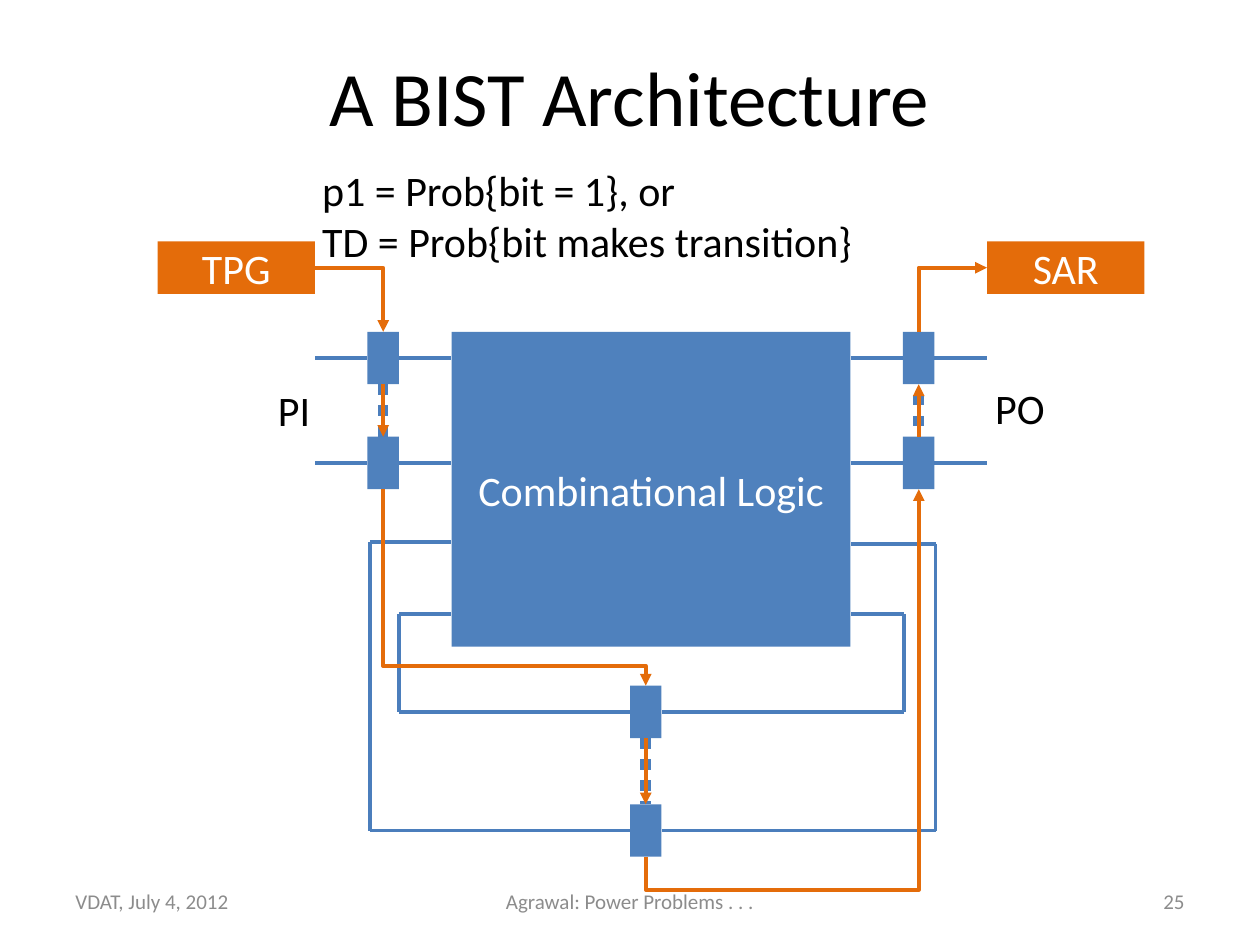
import pptx
import pptx.util
import pptx.dml.color
import pptx.enum.dml
import pptx.enum.shapes
import pptx.enum.text
import pptx.oxml
import pptx.oxml.ns

THEME = {
    "font": "Calibri",
    "ink": "000000", "muted": "8C8C8C", "white": "FFFFFF",
    "block": "4F81BD", "wire": "4B7EBC", "scan": "E46C0A",
    "title": 44, "body": 24, "footer": 12,
    "line": 2.25, "dots": 6,
}
ALIGN = pptx.enum.text.PP_ALIGN
ANCHOR = pptx.enum.text.MSO_ANCHOR
KIND = pptx.enum.shapes.MSO_CONNECTOR
qn = pptx.oxml.ns.qn

deck = pptx.Presentation()
deck.slide_width = pptx.util.Inches(10)
deck.slide_height = pptx.util.Inches(7.5)
page = deck.slides.add_slide(deck.slide_layouts[6])
CELL = deck.slide_width / 120


def write(box, lines, size, color, align, anchor, wrap=True):
    frame = box.text_frame
    frame.text = "\n".join(lines)
    frame.word_wrap = wrap
    frame.vertical_anchor = anchor
    for para in frame.paragraphs:
        para.alignment = align
        para.font.name = THEME["font"]
        para.font.size = pptx.util.Pt(THEME[size])
        para.font.color.rgb = pptx.dml.color.RGBColor.from_string(THEME[color])


def connect(kind, ends, color="wire", width="line", begin=None, end=None):
    line = page.shapes.add_connector(kind, *[round(v * CELL) for v in ends])
    line.line.color.rgb = pptx.dml.color.RGBColor.from_string(THEME[color])
    line.line.width = pptx.util.Pt(THEME[width])
    if begin:
        line.begin_connect(*begin)
    if end:
        line.end_connect(*end)
    pptx.oxml.ns.qn
    stroke = line.line._get_or_add_ln()
    if width == "dots":
        line.line.dash_style = pptx.enum.dml.MSO_LINE.ROUND_DOT
    if color == "scan":
        stroke.append(pptx.oxml.parse_xml(
            f'<a:tailEnd {pptx.oxml.ns.nsdecls("a")} type="triangle"/>'))
    stroke.addnext(pptx.oxml.parse_xml(
        f'<a:effectLst {pptx.oxml.ns.nsdecls("a")}/>'))
    return line


blocks = {}
for name, left, top, width, height, color, label in [
    ("logic", 43, 31.6, 38, 30, "block", "Combinational Logic"),
    ("state top", 60, 65.3, 3, 5, "block", ""),
    ("state bottom", 60, 76.6, 3, 5, "block", ""),
    ("output bottom", 86, 41.6, 3, 5, "block", ""),
    ("output top", 86, 31.6, 3, 5, "block", ""),
    ("input bottom", 35, 41.6, 3, 5, "block", ""),
    ("input top", 35, 31.6, 3, 5, "block", ""),
    ("generator", 15, 23, 15, 5, "scan", "TPG"),
    ("analyzer", 94, 23, 15, 5, "scan", "SAR"),
]:
    block = page.shapes.add_shape(
        pptx.enum.shapes.MSO_SHAPE.RECTANGLE,
        *[round(v * CELL) for v in (left, top, width, height)])
    block.shadow.inherit = False
    block.fill.solid()
    block.fill.fore_color.rgb = pptx.dml.color.RGBColor.from_string(THEME[color])
    block.line.fill.background()
    if label:
        write(block, [label], "body", "white", ALIGN.CENTER, ANCHOR.MIDDLE)
    blocks[name] = block

for group, column, top, bottom in [("input", 36.5, 36.6, 41.6),
                                   ("state", 61.5, 70.3, 76.6)]:
    connect(KIND.STRAIGHT, (column, top, column, bottom), width="dots",
            begin=(blocks[group + " top"], 2), end=(blocks[group + " bottom"], 0))
connect(KIND.STRAIGHT, (87.5, 37.6, 87.5, 40.6), width="dots")

for place, row in [("top", 34.1), ("bottom", 44.1)]:
    source, sink = blocks["input " + place], blocks["output " + place]
    connect(KIND.STRAIGHT, (30, row, 35, row), end=(source, 1))
    connect(KIND.STRAIGHT, (38, row, 43, row), begin=(source, 3))
    connect(KIND.STRAIGHT, (81, row, 86, row), end=(sink, 1))
    connect(KIND.STRAIGHT, (89, row, 94, row), begin=(sink, 3))

for place, left, right, left_row, right_row, bottom in [
    ("top", 38, 86.1, 58.5, 58.5, 67.8),
    ("bottom", 35.25, 89.1, 51.6, 51.8, 79.1),
]:
    state = blocks["state " + place]
    for edge, side, row, near, site in [(left, 43, left_row, 60, 1),
                                        (right, 81, right_row, 63, 3)]:
        connect(KIND.STRAIGHT, (edge, row, side, row))
        connect(KIND.STRAIGHT, (edge, row, edge, bottom))
        connect(KIND.STRAIGHT, (edge, bottom, near, bottom), end=(state, site))

for x1, y1, x2, y2, preset, turn, flips, bend in [
    (30, 25.5, 36.5, 31.6, "bentConnector2", 0, "", None),
    (36.5, 46.6, 61.5, 65.3, "bentConnector3", 270, "H", 0.9),
    (61.5, 81.6, 87.5, 46.6, "bentConnector3", 90, "HV", -0.09),
    (87.5, 31.6, 94, 25.5, "bentConnector2", 90, "HV", None),
]:
    width, height = abs(x2 - x1), abs(y2 - y1)
    if turn:
        width, height = height, width
    left, top = (x1 + x2 - width) / 2, (y1 + y2 - height) / 2
    elbow = connect(KIND.ELBOW, (left, top, left + width, top + height), "scan")
    frame = elbow.element.spPr.find(qn("a:xfrm"))
    frame.set("rot", str(turn * 60000))
    for axis in flips:
        frame.set("flip" + axis, "1")
    shape = elbow.element.spPr.find(qn("a:prstGeom"))
    shape.set("prst", preset)
    if bend is not None:
        shape.get_or_add_avLst().append(pptx.oxml.parse_xml(
            f'<a:gd {pptx.oxml.ns.nsdecls("a")} name="adj1" '
            f'fmla="val {round(bend * 100000)}"/>'))

for first, last, ends, begin_site, end_site in [
    ("input top", "input bottom", (36.5, 36.6, 36.5, 41.6), 2, 0),
    ("output bottom", "output top", (87.5, 41.6, 87.5, 36.6), 0, 2),
    ("state top", "state bottom", (61.5, 70.3, 61.5, 76.6), 2, 0),
]:
    connect(KIND.STRAIGHT, ends, "scan",
            begin=(blocks[first], begin_site), end=(blocks[last], end_site))

for lines, left, top, width, height, size, color, align, anchor, wrap in [
    (["A BIST Architecture"], 6, 3.6, 108, 11, "title", "ink",
     ALIGN.CENTER, ANCHOR.MIDDLE, True),
    (["VDAT, July 4, 2012"], 6, 83.4, 28, 4.8, "footer", "muted",
     ALIGN.LEFT, ANCHOR.MIDDLE, True),
    (["Agrawal: Power Problems . . ."], 41, 83.4, 38, 4.8, "footer", "muted",
     ALIGN.CENTER, ANCHOR.MIDDLE, True),
    (["25"], 86, 83.4, 28, 4.8, "footer", "muted",
     ALIGN.RIGHT, ANCHOR.MIDDLE, True),
    (["PI"], 25.3, 36, 7, 6, "body", "ink", ALIGN.LEFT, ANCHOR.TOP, True),
    (["PO"], 93.6, 35.8, 7.2, 6, "body", "ink", ALIGN.LEFT, ANCHOR.TOP, False),
    (["p1 = Prob{bit = 1}, or", "TD = Prob{bit makes transition}"],
     29.5, 15.1, 53.3, 10.9, "body", "ink", ALIGN.LEFT, ANCHOR.TOP, False),
]:
    box = page.shapes.add_textbox(
        *[round(v * CELL) for v in (left, top, width, height)])
    write(box, lines, size, color, align, anchor, wrap)

deck.save("out.pptx")
